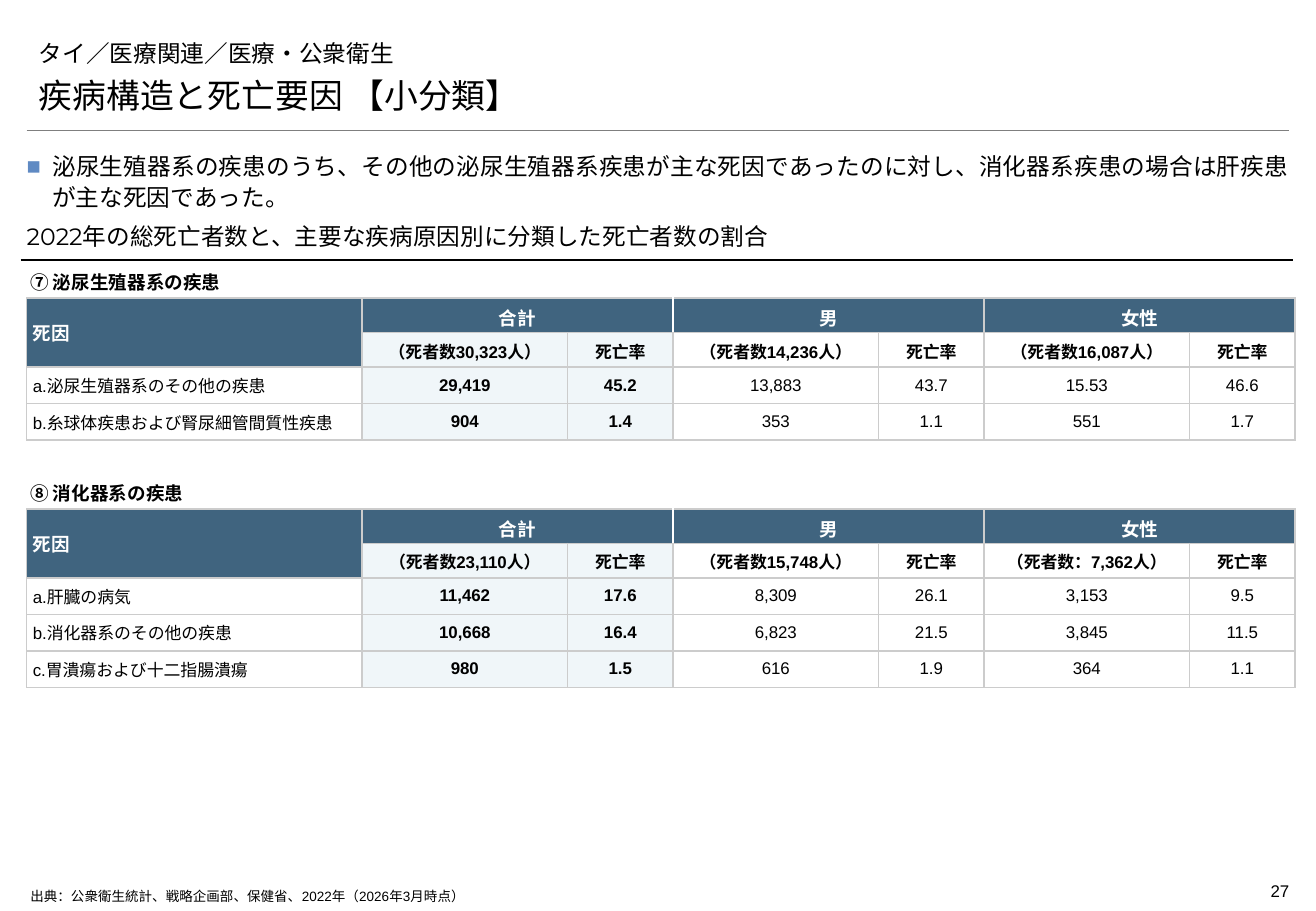
import pptx
import pptx.dml.color
import pptx.enum.shapes
import pptx.enum.text
import pptx.oxml.ns
import pptx.util
from lxml import etree

COLS, ROWS = 1083, 750
UNIT = pptx.util.Inches(0.01)
LEFT, WIDE = 22, 1039
ALIGN = pptx.enum.text.PP_ALIGN
ANCHOR = pptx.enum.text.MSO_ANCHOR
BLACK, WHITE, NAVY, PALE, GREY = "000000", "FFFFFF", "40647F", "F0F6F9", "CCCCCC"
KANJI = "Noto Sans CJK JP"
SPANS = [276] + [169, 87] * 3
GROUPS = ["合計", "男", "女性"]
HEAD, BODY = 28, 30

KIDNEY = ("⑦ 泌尿生殖器系の疾患",
          ["（死者数30,323人）", "（死者数14,236人）", "（死者数16,087人）"],
          [["a.泌尿生殖器系のその他の疾患", "29,419", "45.2", "13,883", "43.7", "15.53", "46.6"],
           ["b.糸球体疾患および腎尿細管間質性疾患", "904", "1.4", "353", "1.1", "551", "1.7"]])
GUT = ("⑧ 消化器系の疾患",
       ["（死者数23,110人）", "（死者数15,748人）", "（死者数：7,362人）"],
       [["a.肝臓の病気", "11,462", "17.6", "8,309", "26.1", "3,153", "9.5"],
        ["b.消化器系のその他の疾患", "10,668", "16.4", "6,823", "21.5", "3,845", "11.5"],
        ["c.胃潰瘍および十二指腸潰瘍", "980", "1.5", "616", "1.9", "364", "1.1"]])


def paint(code):
    """Turn a hex string into a colour."""
    return pptx.dml.color.RGBColor.from_string(code)


def grid(*cells):
    """Turn grid counts into slide lengths."""
    return [round(cell * UNIT) for cell in cells]


def add(parent, tag, **attrs):
    """Append a drawing element to its parent."""
    return etree.SubElement(parent, pptx.oxml.ns.qn(tag), attrs)


def style(para, size, face="Arial", color=BLACK, bold=False, align=ALIGN.LEFT):
    """Set the look of a paragraph."""
    para.alignment = align
    font = para.font
    font.size, font.bold, font.name = pptx.util.Pt(size), bold, face
    font.color.rgb = paint(color)
    add(para._p.pPr.find(pptx.oxml.ns.qn("a:defRPr")), "a:ea", typeface=KANJI)


def write(slide, box, text, size, pads=(10, 5, 10, 5), anchor=ANCHOR.TOP, **look):
    """Place one paragraph of text in a box."""
    frame = slide.shapes.add_textbox(*grid(*box)).text_frame
    frame.word_wrap, frame.vertical_anchor = True, anchor
    (frame.margin_left, frame.margin_top,
     frame.margin_right, frame.margin_bottom) = grid(*pads)
    para = frame.paragraphs[0]
    para.text = text
    style(para, size, **look)
    return para


def rule(slide, left, top, wide, color, weight):
    """Draw a level line."""
    line = slide.shapes.add_connector(
        pptx.enum.shapes.MSO_CONNECTOR.STRAIGHT, *grid(left, top, left + wide, top))
    line.line.color.rgb = paint(color)
    line.line.width = pptx.util.Pt(weight)
    add(line._element.spPr, "a:effectLst")


def header(slide, left, top, wide):
    """Place the two title lines and the rule below."""
    write(slide, (left, top, wide, 34), "タイ／医療関連／医療・公衆衛生", 14,
          anchor=ANCHOR.BOTTOM, face="Montserrat")
    write(slide, (left, top + 30, wide, 44), "疾病構造と死亡要因 【小分類】", 20,
          anchor=ANCHOR.BOTTOM, face="Montserrat")
    rule(slide, left, top + 81, wide, "7F7F7F", 0.25)


def message(slide, left, top, wide):
    """Place the bulleted message and the tables' heading."""
    text = ("泌尿生殖器系の疾患のうち、その他の泌尿生殖器系疾患が主な死因であったのに対し、"
            "消化器系疾患の場合は肝疾患が主な死因であった。")
    frame = slide.shapes.add_textbox(*grid(left, top, wide, 50)).text_frame
    frame.word_wrap = True
    frame.margin_left = frame.margin_top = frame.margin_right = frame.margin_bottom = 0
    para = frame.paragraphs[0]
    para.text = text
    props = para._p.get_or_add_pPr()
    indent = grid(21)[0]
    props.set("marL", str(indent))
    props.set("indent", str(-indent))
    add(add(props, "a:buClr"), "a:srgbClr", val="5F8AC3")
    add(props, "a:buFont", typeface="Arial")
    add(props, "a:buChar", char="■")
    para.line_spacing, para.space_after = 1.1, pptx.util.Pt(2)
    style(para, 14, align=ALIGN.JUSTIFY)
    write(slide, (left, top + 60, wide + 3, 31),
          "2022年の総死亡者数と、主要な疾病原因別に分類した死亡者数の割合", 14,
          pads=(0, 5, 0, 8), anchor=ANCHOR.BOTTOM, face="Montserrat")
    rule(slide, left - 5, top + 91, wide + 8, BLACK, 0.75)


def cell_look(cell, row, col):
    """Set the borders, fill and text of one table cell."""
    props = cell._tc.get_or_add_tcPr()
    for side in "LRTB":
        seam = row == 0 and (col, side) in ((1, "R"), (2, "R"), (3, "L"))
        edge = add(props, f"a:ln{side}", w=str(pptx.util.Pt(1)))
        add(add(edge, "a:solidFill"), "a:srgbClr", val=WHITE if seam else GREY)
    dark = row == 0 or (row == 1 and col == 0)
    cell.fill.solid()
    cell.fill.fore_color.rgb = paint(NAVY if dark else PALE if col in (1, 2) else WHITE)
    cell.vertical_anchor = ANCHOR.MIDDLE
    cell.margin_left = cell.margin_right = cell.margin_top = cell.margin_bottom = grid(5)[0]
    style(cell.text_frame.paragraphs[0], 11 if dark else 10,
          color=WHITE if dark else BLACK, bold=row < 2 or col in (1, 2),
          align=ALIGN.CENTER if col else ALIGN.LEFT)


def section(slide, left, top, data):
    """Place a captioned table of deaths by cause."""
    title, counts, causes = data
    write(slide, (left - 7, top, 369, 29), title, 11, face=KANJI, bold=True)
    lines = [["死因"], [""]] + causes
    for group, count in zip(GROUPS, counts):
        lines[0] += [group, ""]
        lines[1] += [count, "死亡率"]
    highs = [HEAD] * 2 + [BODY] * len(causes)
    table = slide.shapes.add_table(
        len(lines), len(SPANS), *grid(left, top + 27.5, sum(SPANS), sum(highs))).table
    table.first_row = table.horz_banding = False
    for col, wide in zip(table.columns, grid(*SPANS)):
        col.width = wide
    for row, high in zip(table.rows, grid(*highs)):
        row.height = high
    for row, line in enumerate(lines):
        for col, text in enumerate(line):
            cell = table.cell(row, col)
            cell.text = text
            cell_look(cell, row, col)
    table.cell(0, 0).merge(table.cell(1, 0))
    for col in (1, 3, 5):
        table.cell(0, col).merge(table.cell(0, col + 1))


def footer(slide, left, top, wide):
    """Place the source line and the page number."""
    write(slide, (left + 3, top + 11, 969, 16),
          "出典：公衆衛生統計、戦略企画部、保健省、2022年（2026年3月時点）", 8, pads=(0,) * 4)
    write(slide, (left + wide - 79, top, 79, 27), "27", 10,
          pads=(0, 5, 0, 5), align=ALIGN.RIGHT)


def main():
    """Build and save the slide."""
    deck = pptx.Presentation()
    deck.slide_width, deck.slide_height = grid(COLS, ROWS)
    slide = deck.slides.add_slide(deck.slide_layouts[6])
    header(slide, LEFT, 26, WIDE)
    message(slide, LEFT, 123, WIDE)
    section(slide, LEFT, 218, KIDNEY)
    section(slide, LEFT, 391.5, GUT)
    footer(slide, LEFT, 720, WIDE)
    deck.save("out.pptx")


if __name__ == "__main__":
    main()
